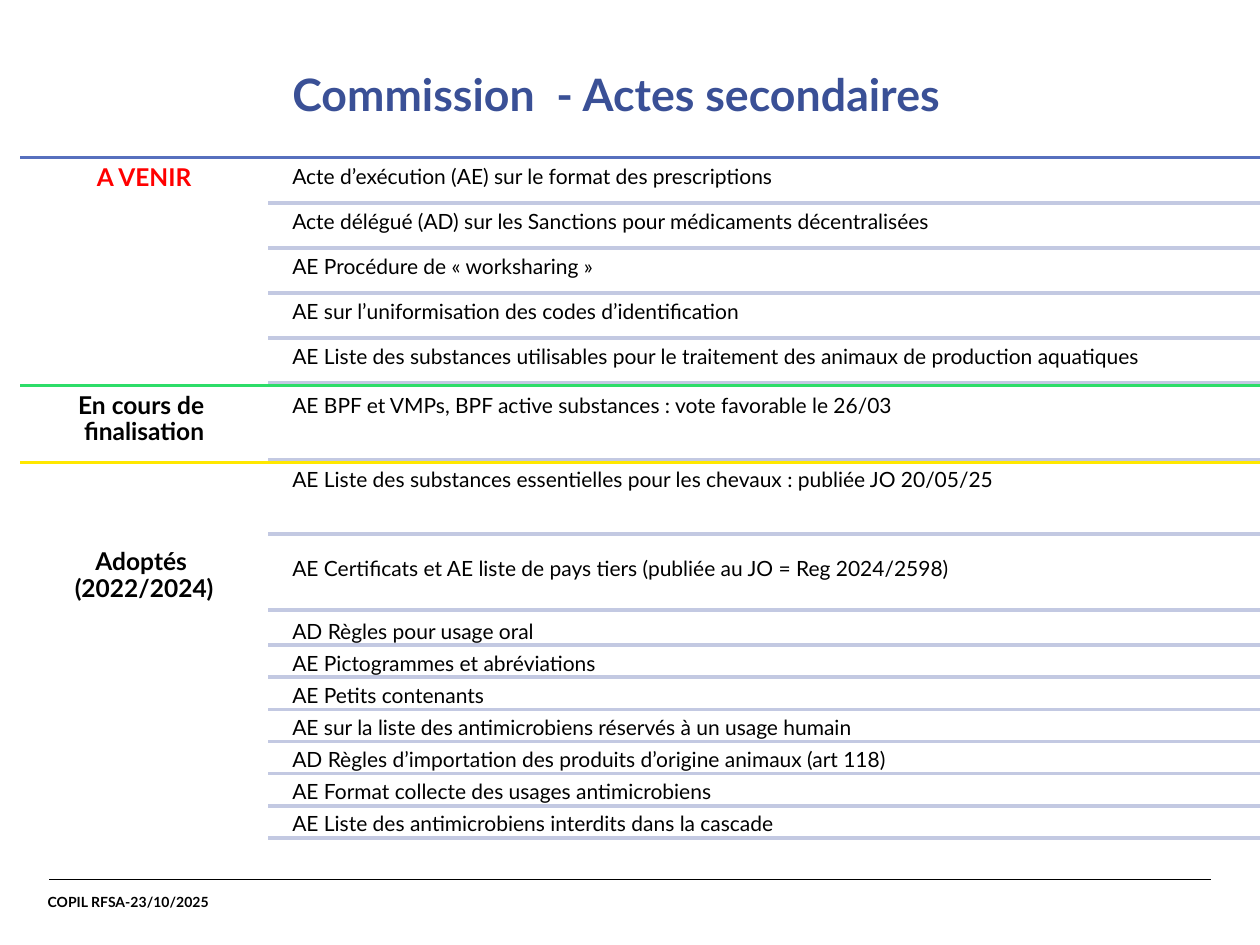
from copy import deepcopy

from lxml import etree
from pptx import Presentation
from pptx.dml.color import RGBColor
from pptx.enum.shapes import MSO_CONNECTOR
from pptx.enum.text import MSO_ANCHOR, MSO_AUTO_SIZE, PP_ALIGN
from pptx.oxml.ns import qn
from pptx.util import Inches, Pt

LEFT, CENTER = PP_ALIGN.LEFT, PP_ALIGN.CENTER
TOP = MSO_ANCHOR.TOP
STRAIGHT = MSO_CONNECTOR.STRAIGHT
FIXED, GROW = MSO_AUTO_SIZE.NONE, MSO_AUTO_SIZE.SHAPE_TO_FIT_TEXT

FONT = "Lato"
BLACK, RED, TITLE_BLUE = "000000", "FF0000", "3A5096"
BLUE, GREEN, YELLOW, ROW_GREY = "5770BE", "2DDD68", "FFE800", "C3C9E2"

SECTION_X, ROW_LINE_X, ROW_X, RIGHT = 0.16, 2.13, 2.27, 10

# Section label, label top, label colour, rule top, rule colour
SECTIONS = [
    ("A VENIR", 1.25, RED, 1.25, BLUE),
    ("En cours de \nfinalisation", 3.06, BLACK, 3.06, GREEN),
    ("Adoptés \n(2022/2024)", 4.3, BLACK, 3.67, YELLOW),
]

UPCOMING = [
    "Acte d’exécution (AE) sur le format des prescriptions",
    "Acte délégué (AD) sur les Sanctions pour médicaments décentralisées",
    "AE Procédure de « worksharing »",
    "AE sur l’uniformisation des codes d’identification",
    "AE Liste des substances utilisables pour le traitement des animaux "
    "de production aquatiques",
]
ADOPTED = [
    "AD Règles pour usage oral",
    "AE Pictogrammes et abréviations",
    "AE Petits contenants",
    "AE sur la liste des antimicrobiens réservés à un usage humain",
    "AD Règles d’importation des produits d’origine animaux (art 118)",
    "AE Format collecte des usages antimicrobiens",
    "AE Liste des antimicrobiens interdits dans la cascade",
]
# Text, text top, line below
TALL_ROWS = [
    ("AE BPF et VMPs, BPF active substances : vote favorable le 26/03", 3.09, 3.65),
    ("AE Liste des substances essentielles pour les chevaux : publiée JO 20/05/25",
     3.68, 4.24),
    ("AE Certificats et AE liste de pays tiers (publiée au JO = Reg 2024/2598)",
     4.38, 4.84),
]


def rgb(color):
    return RGBColor.from_string(color)


def set_frame(tf, inset, wrap=True, auto_size=FIXED):
    values = {
        "word_wrap": wrap, "auto_size": auto_size, "vertical_anchor": TOP,
        "margin_left": Inches(inset), "margin_right": Inches(inset),
        "margin_top": Inches(inset), "margin_bottom": Inches(inset),
    }
    for name, value in values.items():
        setattr(tf, name, value)


def write(tf, text, size, color=BLACK, bold=False, align=LEFT, spacing=0.9):
    p = tf.paragraphs[0]
    p.text = text
    p.alignment = align
    p.line_spacing = spacing
    for r in p.runs:
        for name, value in {"name": FONT, "size": Pt(size), "bold": bold}.items():
            setattr(r.font, name, value)
        r.font.color.rgb = rgb(color)
    # Line breaks take the run format, so that they keep the line height
    for br in p._p.findall(qn("a:br")):
        br.append(deepcopy(p.runs[0]._r.rPr))


def add_text(s, box, text, size, inset, **style):
    tf = s.shapes.add_textbox(*map(Inches, box)).text_frame
    set_frame(tf, inset)
    write(tf, text, size, **style)
    return tf


def add_rule(s, left, y, right, color, width=2):
    line = s.shapes.add_connector(
        STRAIGHT, Inches(left), Inches(y), Inches(right), Inches(y))
    line.line.color.rgb = rgb(color)
    line.line.width = Pt(width)
    etree.SubElement(line._element.spPr, qn("a:effectLst"))


def add_title(s, text):
    title = s.shapes.title
    box = {"left": 2.32, "top": 0.58, "width": 6.91, "height": 0.59}
    for name, value in box.items():
        setattr(title, name, Inches(value))
    set_frame(title.text_frame, 0)
    write(title.text_frame, text, 25.5, color=TITLE_BLUE, bold=True)


def add_row(s, text, top, height, line_y):
    add_text(s, (ROW_X, top, RIGHT - ROW_X, height), text, 12, 0.05)
    add_rule(s, ROW_LINE_X, line_y, RIGHT, ROW_GREY)


def add_even_rows(s, texts, first, last, height):
    """Spread rows evenly between the tops of the first and the last one."""
    step = (last - first) / (len(texts) - 1)
    for i, text in enumerate(texts):
        top = first + i * step
        add_row(s, text, top, height, top + height)


def add_section(s, label, top, color, rule_y, rule_color):
    add_rule(s, SECTION_X, rule_y, RIGHT, rule_color)
    add_text(s, (SECTION_X, top, ROW_LINE_X - SECTION_X, 1.81), label, 14, 0.06,
             color=color, bold=True, align=CENTER)


def add_footer(s, text):
    add_rule(s, 0.39, 6.98, 9.61, BLACK, 0.8)
    tf = add_text(s, (0.28, 7.04, 1.5, 0.24), text, 8, 0.05, bold=True, spacing=1)
    tf.margin_left = tf.margin_right = Inches(0.1)
    tf.word_wrap = False
    tf.auto_size = GROW


def main():
    prs = Presentation()
    prs.slide_width, prs.slide_height = Inches(10), Inches(7.5)
    s = prs.slides.add_slide(prs.slide_layouts[5])

    add_title(s, "Commission  - Actes secondaires")
    add_even_rows(s, UPCOMING, 1.27, 2.7, 0.34)
    for text, top, line_y in TALL_ROWS:
        add_row(s, text, top, 0.56, line_y)
    add_even_rows(s, ADOPTED, 4.88, 6.41, 0.24)
    for section in SECTIONS:
        add_section(s, *section)
    add_footer(s, "COPIL RFSA-23/10/2025")

    prs.save("out.pptx")


if __name__ == "__main__":
    main()
